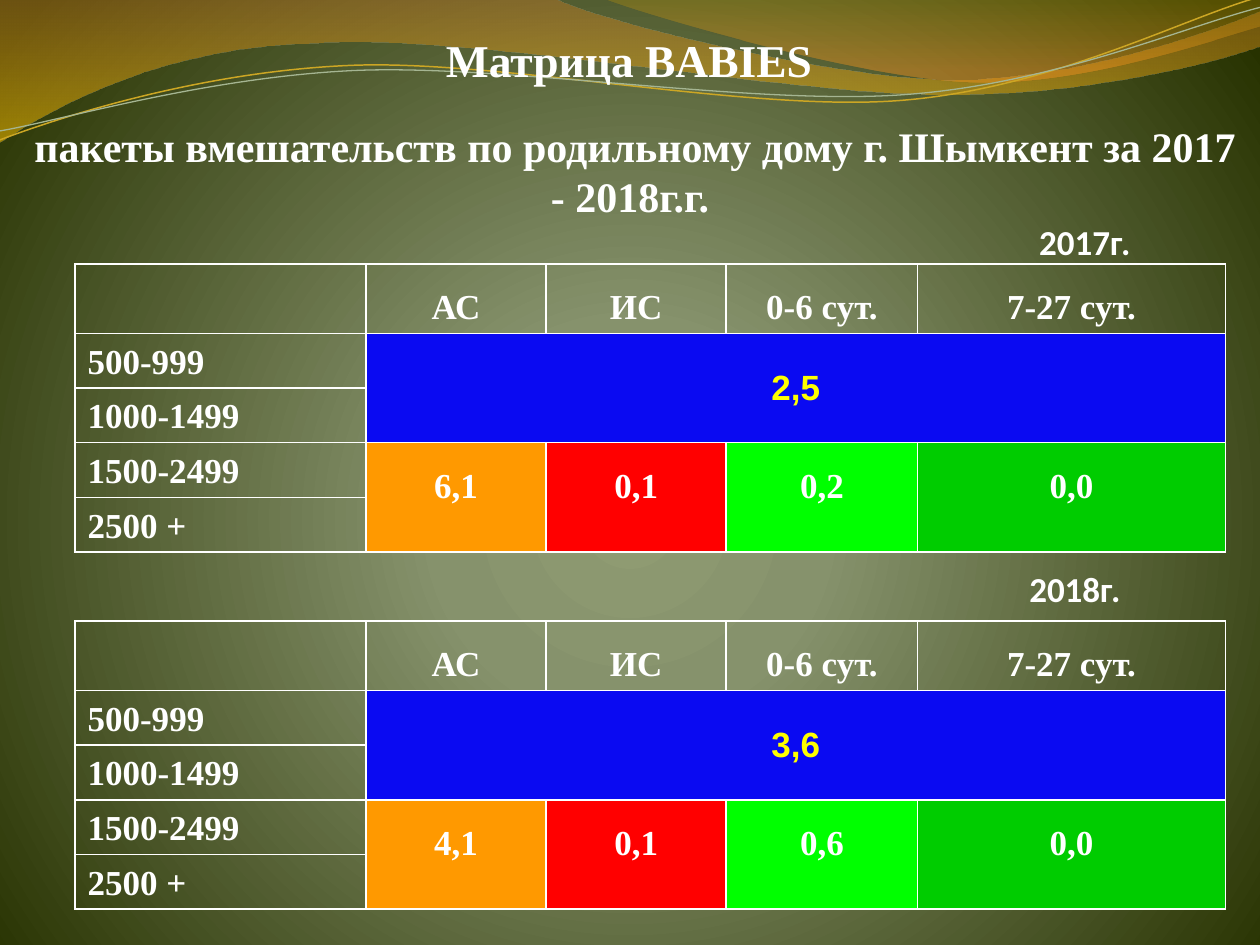
"""Build the BABIES matrix slide with one table per year."""
from lxml import etree
from pptx import Presentation
from pptx.dml.color import RGBColor
from pptx.enum.text import MSO_ANCHOR, PP_ALIGN
from pptx.oxml import parse_xml
from pptx.oxml.ns import nsdecls, qn
from pptx.util import Cm, Pt

TOP, MIDDLE, BOTTOM = MSO_ANCHOR.TOP, MSO_ANCHOR.MIDDLE, MSO_ANCHOR.BOTTOM
LEFT, CENTER = PP_ALIGN.LEFT, PP_ALIGN.CENTER

WHITE = RGBColor(0xFF, 0xFF, 0xFF)
YELLOW = RGBColor(0xFF, 0xFF, 0x00)
BLUE = RGBColor(0x0A, 0x0A, 0xF2)
ORANGE = RGBColor(0xFF, 0x99, 0x00)
RED = RGBColor(0xFF, 0x00, 0x00)
LIME = RGBColor(0x00, 0xFF, 0x00)
GREEN = RGBColor(0x00, 0xCC, 0x00)
GOLD = RGBColor(0xCC, 0xA6, 0x24)
SAGE = RGBColor(0xA5, 0xB5, 0x92)
MOSS = RGBColor(0x8F, 0x9B, 0x72)
OLIVE = RGBColor(0x86, 0x92, 0x6C)
FOREST = RGBColor(0x27, 0x32, 0x00)
COPPER = RGBColor(0xC0, 0x7A, 0x28)
AMBER = RGBColor(0xF7, 0xBF, 0x00)
BRONZE = RGBColor(0xC0, 0x97, 0x09)
TANGERINE = RGBColor(0xF5, 0x93, 0x20)

SERIF, SANS, CAPTION = "Times New Roman", "Arial", "Calibri"

DOWNWARD = '<a:lin ang="5400000" scaled="1"/>'
RADIAL = ('<a:path path="circle"><a:fillToRect l="10000" t="110000" '
          'r="10000" b="100000"/></a:path>')

HEADERS = ["АС", "ИС", "0-6 сут.", "7-27 сут."]
WEIGHTS = ["500-999", "1000-1499", "1500-2499", "2500 +"]
VALUE_FILLS = [ORANGE, RED, LIME, GREEN]
COLUMN_WIDTHS = [5.87, 3.63, 3.63, 3.86, 6.2]
ROW_HEIGHTS = [1.4] + [1.1] * len(WEIGHTS)

WIDE_WAVE = [
    [(0, 0)],
    [(11.18, -0.03)],
    [(12.09, 0.43), (16.87, 1.6), (19.25, 1.6)],
    [(21.67, 1.6), (24.33, 0.66), (25.4, 0.23)],
    [(25.43, 0.91)],
    [(24.97, 1.12), (22.1, 1.93), (18.95, 1.9)],
    [(15.8, 1.9), (9.7, 0.71), (6.53, 0.86)],
    [(3.28, 0.91), (1.17, 2.11), (-0.03, 2.87)],
]
RIGHT_WAVE = [
    [(12.17, -0.03)],
    [(12.93, 0.28), (17.32, 1.57), (19.53, 1.65)],
    [(21.74, 1.75), (24.41, 0.81), (25.4, 0.53)],
    [(25.4, 0)],
]
GOLD_LINE = [
    [(0, 2.82)],
    [(1.22, 2.36), (4.01, 1.45), (7.04, 1.32)],
    [(10.03, 1.19), (15.06, 2.26), (18.11, 2.03)],
    [(21.16, 1.8), (23.83, 0.38), (25.35, -0.05)],
]
SAGE_LINE = [
    [(0, 2.64)],
    [(1.19, 2.44), (4.17, 1.55), (7.19, 1.42)],
    [(10.24, 1.3), (15.16, 2.13), (18.21, 1.91)],
    [(21.23, 1.7), (23.9, 0.53), (25.4, 0.15)],
]


def apply_gradient(parent, stops, direction):
    """Swap the empty fill of a properties element for a gradient."""
    stop_xml = "".join(
        f'<a:gs pos="{pos * 1000}"><a:srgbClr val="{color}">'
        f'<a:alpha val="{opacity * 1000}"/></a:srgbClr></a:gs>'
        for pos, color, opacity in stops)
    gradient = parse_xml(f'<a:gradFill {nsdecls("a")} rotWithShape="1">'
                         f'<a:gsLst>{stop_xml}</a:gsLst>{direction}</a:gradFill>')
    parent.replace(parent.find(qn("a:noFill")), gradient)


def set_background(s):
    """Give the slide its radial green background."""
    s.background.fill.background()
    stops = [(0, MOSS, 100), (25, OLIVE, 100), (100, FOREST, 100)]
    apply_gradient(s.element.find(".//" + qn("p:bgPr")), stops, RADIAL)


def add_outline(s, segments, close):
    """Add an unfilled freeform of lines (one point) and cubic curves (three)."""
    points = [(Cm(x), Cm(y)) for segment in segments for x, y in segment]
    builder = s.shapes.build_freeform(*points[0])
    builder.add_line_segments(points[1:], close=close)
    sp = builder.convert_to_shape()
    lines = iter(sp.element.findall(".//" + qn("a:lnTo")))
    for segment in segments[1:]:
        first, *others = [next(lines) for _ in segment]
        if others:
            first.tag = qn("a:cubicBezTo")
            for line in others:
                first.append(line[0])
                line.getparent().remove(line)
    sp.shadow.inherit = False
    sp.fill.background()
    return sp


def add_wave(s, segments, stops):
    """Add a translucent wave."""
    sp = add_outline(s, segments, True)
    sp.line.fill.background()
    apply_gradient(sp.element.spPr, stops, DOWNWARD)


def add_wave_line(s, segments, color, width):
    """Add a thin curved line."""
    sp = add_outline(s, segments, False)
    sp.line.color.rgb = color
    sp.line.width = Pt(width)


def write(tf, text, size, font=SERIF, color=WHITE, align=CENTER):
    """Write one bold paragraph."""
    p = tf.paragraphs[0]
    p.text = text
    p.alignment = align
    p.font.size = Pt(size)
    p.font.name = font
    p.font.bold = True
    p.font.color.rgb = color


def format_title(s, text):
    """Place the title in front of the waves."""
    title = s.shapes.title
    title.left, title.top, title.width, title.height = Cm(1.1), Cm(0.53), Cm(23.4), Cm(1.35)
    title.element.getparent().append(title.element)
    title.text_frame.vertical_anchor = MIDDLE
    write(title.text_frame, text, 26)


def add_text(s, box, text, size, font=SERIF, align=CENTER, anchor=TOP):
    """Add a wrapping text box."""
    tf = s.shapes.add_textbox(*map(Cm, box)).text_frame
    tf.word_wrap = True
    tf.vertical_anchor = anchor
    write(tf, text, size, font, align=align)


def add_borders(cell):
    """Draw a thin white line on each side of a cell."""
    tc_pr = cell._tc.get_or_add_tcPr()
    for side in ("lnL", "lnR", "lnT", "lnB"):
        ln = etree.SubElement(tc_pr, qn(f"a:{side}"), w=str(Pt(1)))
        fill = etree.SubElement(ln, qn("a:solidFill"))
        etree.SubElement(fill, qn("a:srgbClr"), val=str(WHITE))


def fill_cell(cell, text, fill=None, anchor=BOTTOM, **style):
    """Write a table cell and set its fill."""
    cell.vertical_anchor = anchor
    write(cell.text_frame, text, 20, **style)
    if fill is not None:
        cell.fill.solid()
        cell.fill.fore_color.rgb = fill


def add_matrix(s, top, total, values):
    """Add the weight by period matrix of one year."""
    table = s.shapes.add_table(len(ROW_HEIGHTS), len(COLUMN_WIDTHS), Cm(1.51), Cm(top),
                               Cm(sum(COLUMN_WIDTHS)), Cm(sum(ROW_HEIGHTS))).table
    table.first_row = table.horz_banding = False
    for column, width in zip(table.columns, COLUMN_WIDTHS):
        column.width = Cm(width)
    for row, height in zip(table.rows, ROW_HEIGHTS):
        row.height = Cm(height)
    for cell in table.iter_cells():
        add_borders(cell)
        cell.fill.background()
    for row, weight in enumerate(WEIGHTS, 1):
        fill_cell(table.cell(row, 0), weight, align=LEFT)
    table.cell(1, 1).merge(table.cell(2, 4))
    fill_cell(table.cell(1, 1), total, BLUE, MIDDLE, font=SANS, color=YELLOW)
    for col, (header, value, fill) in enumerate(zip(HEADERS, values, VALUE_FILLS), 1):
        fill_cell(table.cell(0, col), header)
        cell = table.cell(3, col)
        cell.merge(table.cell(4, col))
        cell.margin_bottom = Cm(0.92)
        fill_cell(cell, value, fill)


def main():
    """Build and save the slide."""
    prs = Presentation()
    prs.slide_width, prs.slide_height = Cm(25.4), Cm(19.05)
    s = prs.slides.add_slide(prs.slide_layouts[5])
    set_background(s)
    add_wave(s, WIDE_WAVE, [(0, COPPER, 45), (100, AMBER, 55)])
    add_wave(s, RIGHT_WAVE, [(0, BRONZE, 30), (80, TANGERINE, 45)])
    add_wave_line(s, GOLD_LINE, GOLD, 0.85)
    add_wave_line(s, SAGE_LINE, SAGE, 0.75)
    format_title(s, "Матрица BABIES ")
    add_text(s, (0, 2.29, 25.4, 2.31),
             " пакеты вмешательств по родильному дому г. Шымкент за 2017 - 2018г.г.",
             24, anchor=MIDDLE)
    add_matrix(s, 5.32, "2,5", ["6,1", "0,1", "0,2", "0,0"])
    add_matrix(s, 12.52, "3,6", ["4,1", "0,1", "0,6", "0,0"])
    add_text(s, (20.7, 4.32, 4.2, 1.1), "2017г.", 20, CAPTION, LEFT)
    add_text(s, (20.5, 11.32, 4.2, 1.1), "2018г.", 20, CAPTION, LEFT)
    prs.save("out.pptx")


if __name__ == "__main__":
    main()
